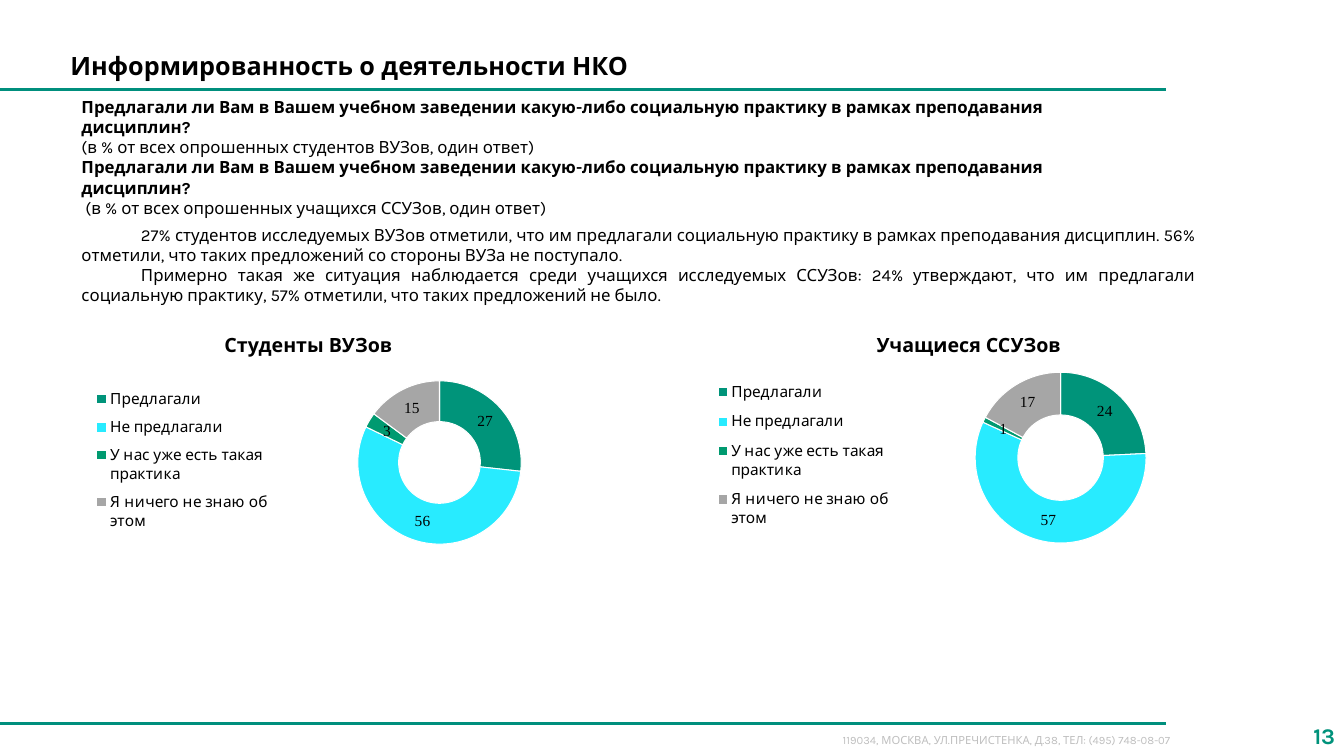
from lxml import etree
from pptx import Presentation
from pptx.chart.data import CategoryChartData
from pptx.dml.color import RGBColor
from pptx.enum.chart import XL_CHART_TYPE, XL_LEGEND_POSITION
from pptx.enum.shapes import MSO_CONNECTOR
from pptx.enum.text import MSO_ANCHOR, PP_ALIGN
from pptx.oxml.ns import qn
from pptx.util import Pt

# Content
FONT, LABEL_FONT = "Karla", "Times New Roman"
GREEN, BLACK = "008F7D", "000000"
HEADING = "Информированность о деятельности НКО"
QUESTION = ("Предлагали ли Вам в Вашем учебном заведении какую-либо "
            "социальную практику в рамках преподавания дисциплин?")
QUESTIONS = [
    (QUESTION, True),
    ("(в % от всех опрошенных студентов ВУЗов, один ответ)", False),
    (QUESTION, True),
    (" (в % от всех опрошенных учащихся ССУЗов, один ответ)", False),
]
FINDINGS = [
    ("27% студентов исследуемых ВУЗов отметили, что им предлагали социальную "
     "практику в рамках преподавания дисциплин. 56% отметили, что таких "
     "предложений со стороны ВУЗа не поступало.", False),
    ("Примерно такая же ситуация наблюдается среди учащихся исследуемых ССУЗов: "
     "24% утверждают, что им предлагали социальную практику, 57% отметили, что "
     "таких предложений не было.", False),
]
ADDRESS = "119034, МОСКВА, УЛ.ПРЕЧИСТЕНКА, Д.38, ТЕЛ: (495) 748-08-07"
PAGE = "13"
ANSWERS = ["Предлагали", "Не предлагали", "У нас уже есть такая практика",
           "Я ничего не знаю об этом"]
ANSWER_COLORS = ["00947A", "28EBFF", "009A70", "A6A6A6"]
GROUPS = [  # caption, caption box, chart box, values
    ("Студенты ВУЗов", (71, 325, 470, 34), (28, 345, 600, 219), (27, 56, 3, 15)),
    ("Учащиеся ССУЗов", (726, 325, 470, 34), (644, 335, 600, 229), (24, 57, 1, 17)),
]
PLOT_AREA = (0.49, 0.15, 0.38, 0.74)
LEGEND_AREA = (0.1, 0.15, 0.31, 0.72)
RULES_Y = (718, 89)
RULE_END = 1156
FIRST_LINE = 59

PX = 9144  # 100 px to the inch


def px(*lengths):
    return [length * PX for length in lengths]


def rgb(color):
    return RGBColor.from_string(color)


def style(font, size, color=BLACK, name=FONT, bold=False):
    font.size, font.name, font.bold = Pt(size), name, bold
    font.color.rgb = rgb(color)


def add_text(box, lines, size, color=BLACK, align=None, anchor=MSO_ANCHOR.TOP,
             first_line=0):
    frame = slide.shapes.add_textbox(*px(*box)).text_frame
    frame.word_wrap = True
    frame.vertical_anchor = anchor
    frame.text = "\n".join(text for text, _ in lines)
    for paragraph, (_, bold) in zip(frame.paragraphs, lines):
        paragraph.alignment = align
        if first_line:
            properties = paragraph._p.get_or_add_pPr()
            properties.set("marL", "0")
            properties.set("indent", str(first_line * PX))
        style(paragraph.runs[0].font, size, color, bold=bold)


def set_layout(parent, area, after=None, inner=False):
    for old in parent.findall(qn("c:layout")):
        parent.remove(old)
    layout = etree.Element(qn("c:layout"))
    manual = etree.SubElement(layout, qn("c:manualLayout"))
    settings = [("layoutTarget", "inner")] if inner else []
    settings += [("xMode", "edge"), ("yMode", "edge"), *zip("xywh", area)]
    for tag, value in settings:
        etree.SubElement(manual, qn("c:" + tag)).set("val", str(value))
    if after is None:
        parent.insert(0, layout)
    else:
        after.addnext(layout)


def add_doughnut(box, values):
    data = CategoryChartData(number_format="#,##0")
    data.categories = ANSWERS
    data.add_series("Series 1", values)
    chart = slide.shapes.add_chart(XL_CHART_TYPE.DOUGHNUT, *px(*box), data).chart
    chart.has_title = False
    style(chart.font, 10.5, name=LABEL_FONT)

    # Legend and plot positions
    chart.has_legend = True
    legend = chart.legend
    legend.position = XL_LEGEND_POSITION.LEFT
    legend.include_in_layout = False
    style(legend.font, 11)
    legend_xml = legend._element
    set_layout(legend_xml, LEGEND_AREA, after=legend_xml.find(qn("c:legendPos")))
    set_layout(chart._chartSpace.chart.plotArea, PLOT_AREA, inner=True)

    # Slices and value labels
    plot = chart.plots[0]
    plot.vary_by_categories = True
    for index, color in enumerate(ANSWER_COLORS):
        slice_format = plot.series[0].points[index].format
        slice_format.fill.solid()
        slice_format.fill.fore_color.rgb = rgb(color)
        slice_format.line.color.rgb = rgb("FFFFFF")
        slice_format.line.width = Pt(0.75)
    labels = plot.series[0].data_labels
    labels.show_value = True
    labels.show_percentage = False
    labels.number_format = "#,##0"
    labels.number_format_is_linked = False
    style(labels.font, 11, name=LABEL_FONT)


prs = Presentation()
prs.slide_width, prs.slide_height = px(1333, 750)
slide = prs.slides.add_slide(prs.slide_layouts[6])

# Rules, footer and page number
for y in RULES_Y:
    rule = slide.shapes.add_connector(MSO_CONNECTOR.STRAIGHT, *px(0, y, RULE_END, y))
    rule.line.color.rgb = rgb(GREEN)
    rule.line.width = Pt(2)
    etree.SubElement(rule._element.spPr, qn("a:effectLst"))
add_text((826, 723, 384, 24), [(ADDRESS, False)], 8, "BFBFBF")
add_text((1265, 710, 69, 40), [(PAGE, True)], 16, "00927B",
         PP_ALIGN.RIGHT, MSO_ANCHOR.MIDDLE)

# Heading, questions and findings
add_text((60, 45, 1135, 40), [(HEADING, True)], 18)
add_text((71, 91, 1086, 91), QUESTIONS, 12)
add_text((71, 218, 1125, 91), FINDINGS, 12, align=PP_ALIGN.JUSTIFY,
         first_line=FIRST_LINE)

# Charts with captions
for caption, caption_box, chart_box, values in GROUPS:
    add_doughnut(chart_box, values)
    add_text(caption_box, [(caption, True)], 14, align=PP_ALIGN.CENTER,
             anchor=MSO_ANCHOR.MIDDLE)

prs.save("out.pptx")
